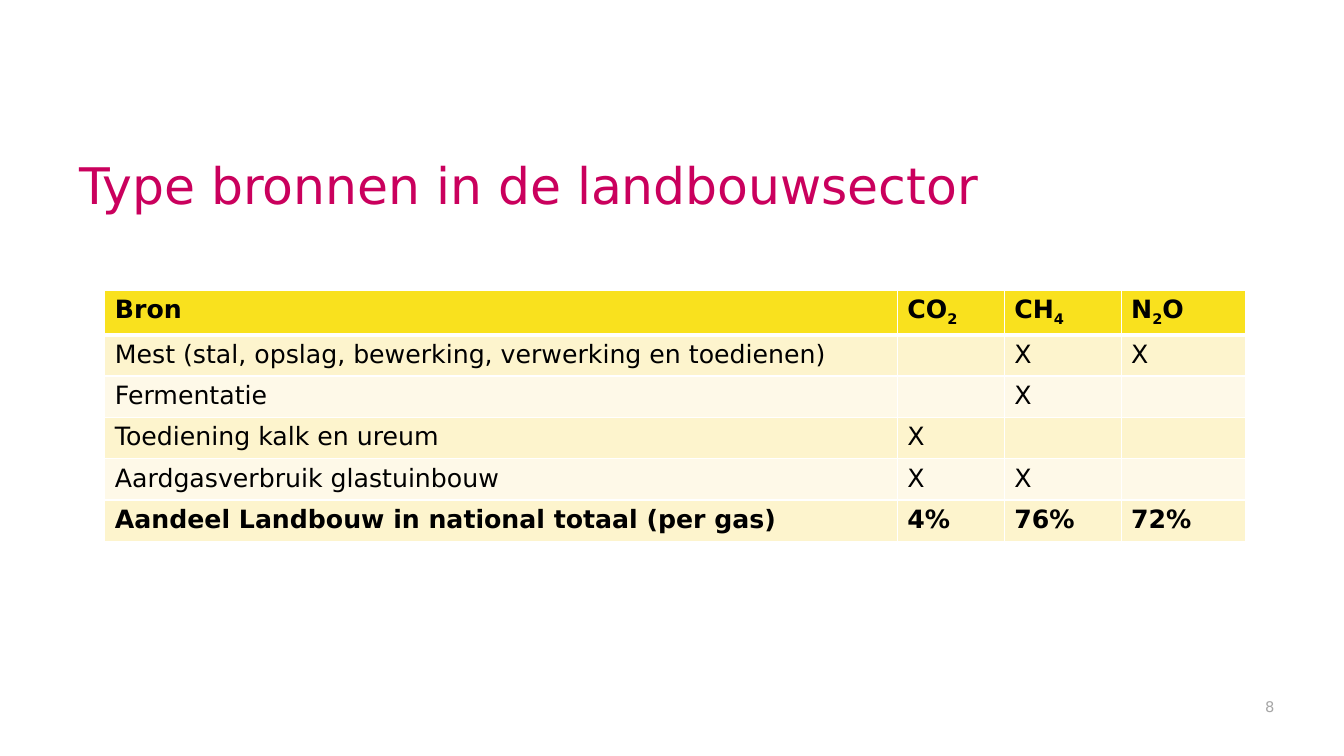
from lxml import etree
from pptx import Presentation
from pptx.dml.color import RGBColor
from pptx.enum.text import MSO_ANCHOR, PP_ALIGN
from pptx.oxml.ns import qn
from pptx.util import Pt

PX = 9144
FONT = "DejaVu Sans"
BOTTOM, RIGHT, LEFT = MSO_ANCHOR.BOTTOM, PP_ALIGN.RIGHT, PP_ALIGN.LEFT
COLORS = {
    "title": "CA005D",
    "number": "A6A6A6",
    "text": "000000",
    "header": "F9E11E",
    "odd": "FDF4CD",
    "even": "FEF9E8",
    "border": "FFFFFF",
}
COLUMN_WIDTHS = [786, 106, 116, 123]
ROW_HEIGHT = 41
SOURCES = [
    ["Bron", "CO2", "CH4", "N2O"],
    ["Mest (stal, opslag, bewerking, verwerking en toedienen)", "", "X", "X"],
    ["Fermentatie", "", "X", ""],
    ["Toediening kalk en ureum", "X", "", ""],
    ["Aardgasverbruik glastuinbouw", "X", "X", ""],
    ["Aandeel Landbouw in national totaal (per gas)", "4%", "76%", "72%"],
]


def style_font(font, size, color, bold=False):
    """Set the typeface, size, colour and weight of a font."""
    font.name = FONT
    font.size = Pt(size)
    font.bold = bold
    font.color.rgb = RGBColor.from_string(COLORS[color])


def add_line(page, box, text, size, color, align=LEFT, right_inset=10, spacing=1.0):
    """Place one line of text at the bottom of the box."""
    frame = page.shapes.add_textbox(*(length * PX for length in box)).text_frame
    frame.word_wrap = True
    frame.vertical_anchor = BOTTOM
    frame.margin_right = right_inset * PX
    para = frame.paragraphs[0]
    para.alignment = align
    para.line_spacing = spacing
    para.add_run().text = text
    style_font(para.font, size, color)


def add_formula(para, formula):
    """Write a chemical formula with its digits as subscripts."""
    for symbol in formula:
        span = para.add_run()
        span.text = symbol
        if symbol.isdigit():
            span.font._element.set("baseline", "-25000")


def add_borders(cell, top, bottom):
    """Draw the four cell borders, with widths in points."""
    properties = cell._tc.get_or_add_tcPr()
    for side, width in (("L", 1), ("R", 1), ("T", top), ("B", bottom)):
        line = etree.SubElement(properties, qn(f"a:ln{side}"), w=str(Pt(width)))
        fill = etree.SubElement(line, qn("a:solidFill"))
        etree.SubElement(fill, qn("a:srgbClr"), val=COLORS["border"])


def add_source_table(page, left, top):
    """Place the table of emission sources with its corner at left, top."""
    width, height = sum(COLUMN_WIDTHS), ROW_HEIGHT * len(SOURCES)
    table = page.shapes.add_table(
        len(SOURCES), len(COLUMN_WIDTHS), left * PX, top * PX, width * PX, height * PX
    ).table
    for column, column_width in zip(table.columns, COLUMN_WIDTHS):
        column.width = column_width * PX
    for index, values in enumerate(SOURCES):
        table.rows[index].height = ROW_HEIGHT * PX
        is_header = index == 0
        band = "header" if is_header else "odd" if index % 2 else "even"
        bold = is_header or index == len(SOURCES) - 1
        for cell, value in zip(table.rows[index].cells, values):
            add_borders(cell, 3 if index == 1 else 1, 3 if is_header else 1)
            cell.fill.solid()
            cell.fill.fore_color.rgb = RGBColor.from_string(COLORS[band])
            para = cell.text_frame.paragraphs[0]
            if is_header:
                add_formula(para, value)
            elif value:
                para.add_run().text = value
            style_font(para.font, 18, "text", bold)


def main():
    """Build the slide and save the deck."""
    deck = Presentation()
    deck.slide_width, deck.slide_height = 1333 * PX, 750 * PX
    page = deck.slides.add_slide(deck.slide_layouts[6])
    add_line(page, (69, 115, 1195, 104), "Type bronnen in de landbouwsector", 36, "title", spacing=0.9)
    add_line(page, (717, 680, 547, 35), "8", 10.5, "number", RIGHT, 0)
    add_source_table(page, 104, 288)
    deck.save("out.pptx")


if __name__ == "__main__":
    main()
